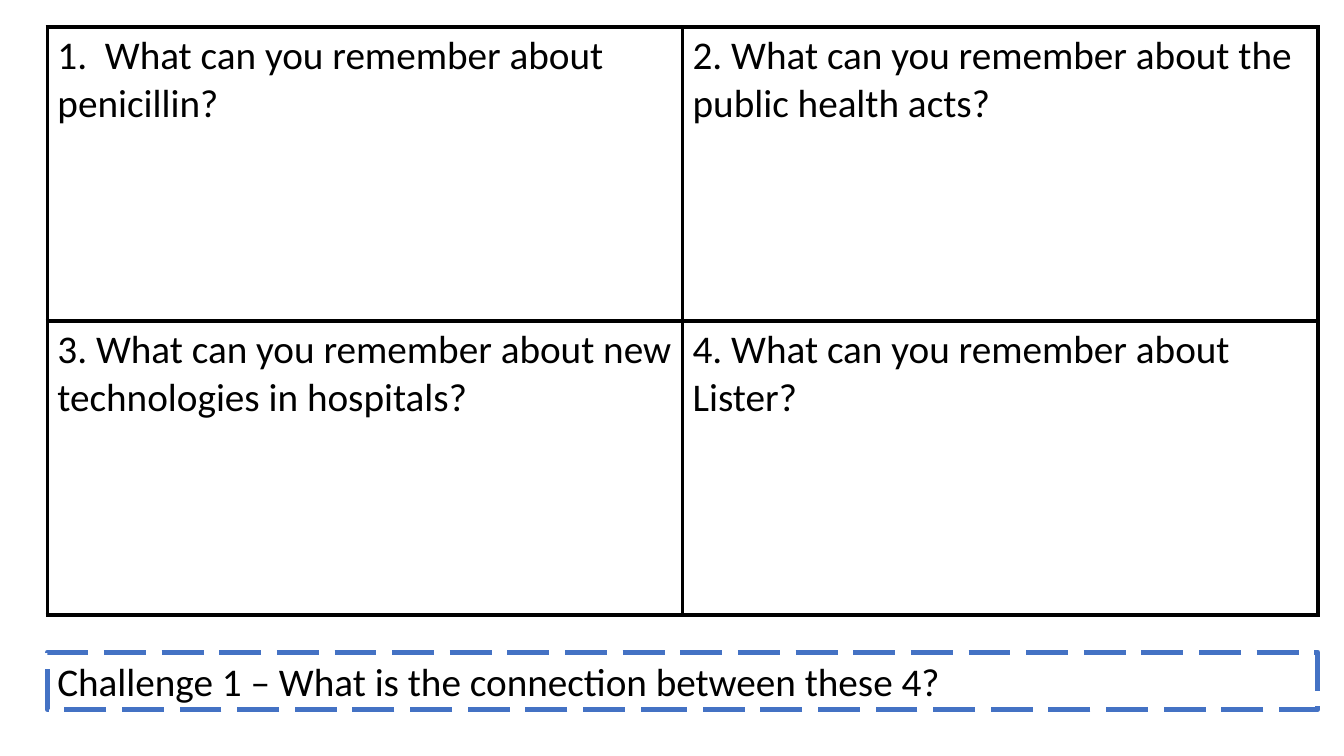
from lxml.etree import SubElement
from pptx import Presentation
from pptx.dml.color import RGBColor
from pptx.enum.dml import MSO_LINE
from pptx.enum.shapes import MSO_SHAPE
from pptx.enum.text import MSO_ANCHOR, MSO_AUTO_SIZE, PP_ALIGN
from pptx.oxml.ns import qn
from pptx.util import Inches, Pt

COLOURS = {"ink": "000000", "paper": "FFFFFF", "dash": "4472C4"}
LEFT, WIDTH = Inches(0.47), Inches(12.6)
QUESTIONS = [
    ["1.  What can you remember about penicillin?",
     "2. What can you remember about the public health acts?"],
    ["3. What can you remember about new technologies in hospitals?",
     "4. What can you remember about Lister?"],
]
CHALLENGE = "Challenge 1 – What is the connection between these 4?"


def colour(name):
    return RGBColor.from_string(COLOURS[name])


def write(frame, text):
    paragraph = frame.paragraphs[0]
    paragraph.alignment = PP_ALIGN.LEFT
    run = paragraph.add_run()
    run.text = text
    run.font.name = "Calibri"
    run.font.size = Pt(28)
    run.font.color.rgb = colour("ink")


def border_cell(cell, width):
    """Draw all four edges, then clear the fill; the schema wants this order."""
    properties = cell._tc.get_or_add_tcPr()
    for edge in ("a:lnL", "a:lnR", "a:lnT", "a:lnB"):
        line = SubElement(properties, qn(edge), w=str(width))
        fill = SubElement(line, qn("a:solidFill"))
        SubElement(fill, qn("a:srgbClr"), val=COLOURS["ink"])
    cell.fill.background()


def add_question_grid(slide):
    rows, columns = len(QUESTIONS), len(QUESTIONS[0])
    grid = slide.shapes.add_table(
        rows, columns, LEFT, Inches(0.27), WIDTH, Inches(5.83)).table
    grid.first_row = grid.horz_banding = False
    for r, questions in enumerate(QUESTIONS):
        for c, question in enumerate(questions):
            cell = grid.cell(r, c)
            write(cell.text_frame, question)
            border_cell(cell, Pt(3))


def add_challenge(slide):
    challenge = slide.shapes.add_shape(
        MSO_SHAPE.RECTANGLE, LEFT, Inches(6.47), WIDTH, Inches(0.57))
    challenge.shadow.inherit = False
    challenge.fill.solid()
    challenge.fill.fore_color.rgb = colour("paper")
    challenge.line.color.rgb = colour("dash")
    challenge.line.width = Pt(3.75)
    challenge.line.dash_style = MSO_LINE.LONG_DASH
    frame = challenge.text_frame
    frame.word_wrap = True
    frame.auto_size = MSO_AUTO_SIZE.SHAPE_TO_FIT_TEXT
    frame.vertical_anchor = MSO_ANCHOR.TOP
    write(frame, CHALLENGE)


def main():
    deck = Presentation()
    deck.slide_width, deck.slide_height = Inches(13.33), Inches(7.5)
    slide = deck.slides.add_slide(deck.slide_layouts[6])
    add_question_grid(slide)
    add_challenge(slide)
    deck.save("out.pptx")


if __name__ == "__main__":
    main()
